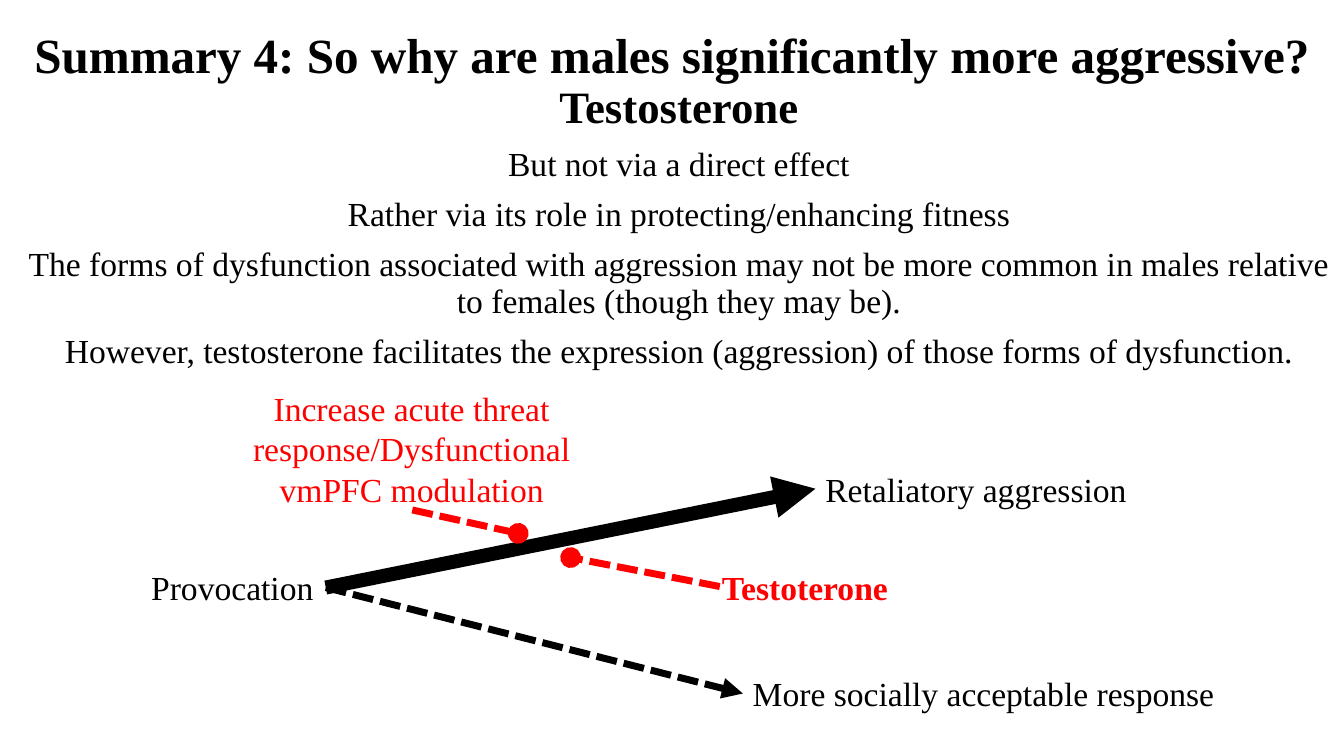
from pptx import Presentation
from pptx.dml.color import RGBColor
from pptx.enum.dml import MSO_LINE_DASH_STYLE as Dash
from pptx.enum.shapes import MSO_CONNECTOR
from pptx.enum.text import MSO_ANCHOR, MSO_AUTO_SIZE as AutoSize, PP_ALIGN as Align
from pptx.oxml.ns import qn
from pptx.util import Cm, Pt
from lxml import etree

BLACK = RGBColor(0x00, 0x00, 0x00)
RED = RGBColor(0xFF, 0x00, 0x00)
FONT = "Times New Roman"


def style_text(paragraph, size, color=BLACK, bold=False, align=Align.CENTER):
    paragraph.alignment = align
    font = paragraph.font
    font.name, font.size, font.bold = FONT, Pt(size), bold
    font.color.rgb = color


def add_arrow(start, end, color, width, head, dash=None):
    """Draw a straight line with a head at its end; start and end are in cm."""
    arrow = slide.shapes.add_connector(
        MSO_CONNECTOR.STRAIGHT, *(Cm(v) for v in start + end))
    arrow.line.color.rgb = color
    arrow.line.width = Pt(width)
    if dash:
        arrow.line.dash_style = dash
    etree.SubElement(arrow.line._get_or_add_ln(), qn("a:tailEnd"), type=head)
    etree.SubElement(arrow._element.spPr, qn("a:effectLst"))
    return arrow


prs = Presentation()
prs.slide_width, prs.slide_height = Cm(33.87), Cm(19.05)
slide = prs.slides.add_slide(prs.slide_layouts[1])

# Title and summary
title, summary = slide.shapes.title, slide.placeholders[1]
for holder, box in ((title, (0, 0.66, 33.87, 2.31)),
                    (summary, (0.36, 2.01, 33.5, 11.07))):
    holder.left, holder.top, holder.width, holder.height = (Cm(v) for v in box)
    holder.text_frame.auto_size = AutoSize.NONE
    holder.text_frame.vertical_anchor = MSO_ANCHOR.TOP

title.text_frame.text = "Summary 4: So why are males significantly more aggressive?"
heading = title.text_frame.paragraphs[0]
heading.line_spacing = 0.9
style_text(heading, 35.1, bold=True)

summary.text_frame.text = "\n".join([
    "Testosterone",
    "But not via a direct effect",
    "Rather via its role in protecting/enhancing fitness",
    "The forms of dysfunction associated with aggression may not be more common "
    "in males relative to females (though they may be).",
    "However, testosterone facilitates the expression (aggression) of those forms "
    "of dysfunction.",
])
for i, point in enumerate(summary.text_frame.paragraphs):
    properties = point._p.get_or_add_pPr()
    properties.set("marL", "0")
    properties.set("indent", "0")
    etree.SubElement(properties, qn("a:buNone"))
    point.line_spacing = 0.9
    point.space_before = Pt(10 if i else 0)
    style_text(point, 24 if i else 32, bold=i == 0)

# Diagram labels: text, box in cm, colour, bold, wrapped and centred
LABELS = [
    ("Provocation", (3.56, 14.17, 4.65, 1.27), BLACK, False, False),
    ("Retaliatory aggression", (20.55, 11.68, 8.18, 1.27), BLACK, False, False),
    ("More socially acceptable response", (18.72, 16.84, 12.24, 1.27), BLACK, False, False),
    ("Increase acute threat response/Dysfunctional vmPFC modulation",
     (5.89, 9.65, 8.97, 3.33), RED, False, True),
    ("Testoterone", (15.8, 14.15, 8.97, 1.27), RED, True, True),
]
labels = []
for text, box, color, bold, wrapped in LABELS:
    label = slide.shapes.add_textbox(*(Cm(v) for v in box))
    frame = label.text_frame
    frame.word_wrap = wrapped
    frame.auto_size = AutoSize.SHAPE_TO_FIT_TEXT
    frame.text = text
    style_text(frame.paragraphs[0], 24, color, bold,
               Align.CENTER if wrapped else Align.LEFT)
    labels.append(label)
provocation, retaliation, acceptable = labels[:3]

# Responses to provocation
to_acceptable = add_arrow((8.21, 14.81), (18.72, 17.48), BLACK, 5, "triangle", Dash.SQUARE_DOT)
to_retaliation = add_arrow((8.21, 14.81), (20.55, 12.32), BLACK, 10, "triangle")
for arrow, response in ((to_acceptable, acceptable), (to_retaliation, retaliation)):
    arrow.begin_connect(provocation, 3)
    arrow.end_connect(response, 1)

# Influences on retaliation
for start, end in (((10.39, 12.85), (13.06, 13.44)),
                   ((18.14, 14.78), (14.38, 14.05))):
    add_arrow(start, end, RED, 5, "oval", Dash.SQUARE_DOT)

prs.save("out.pptx")
